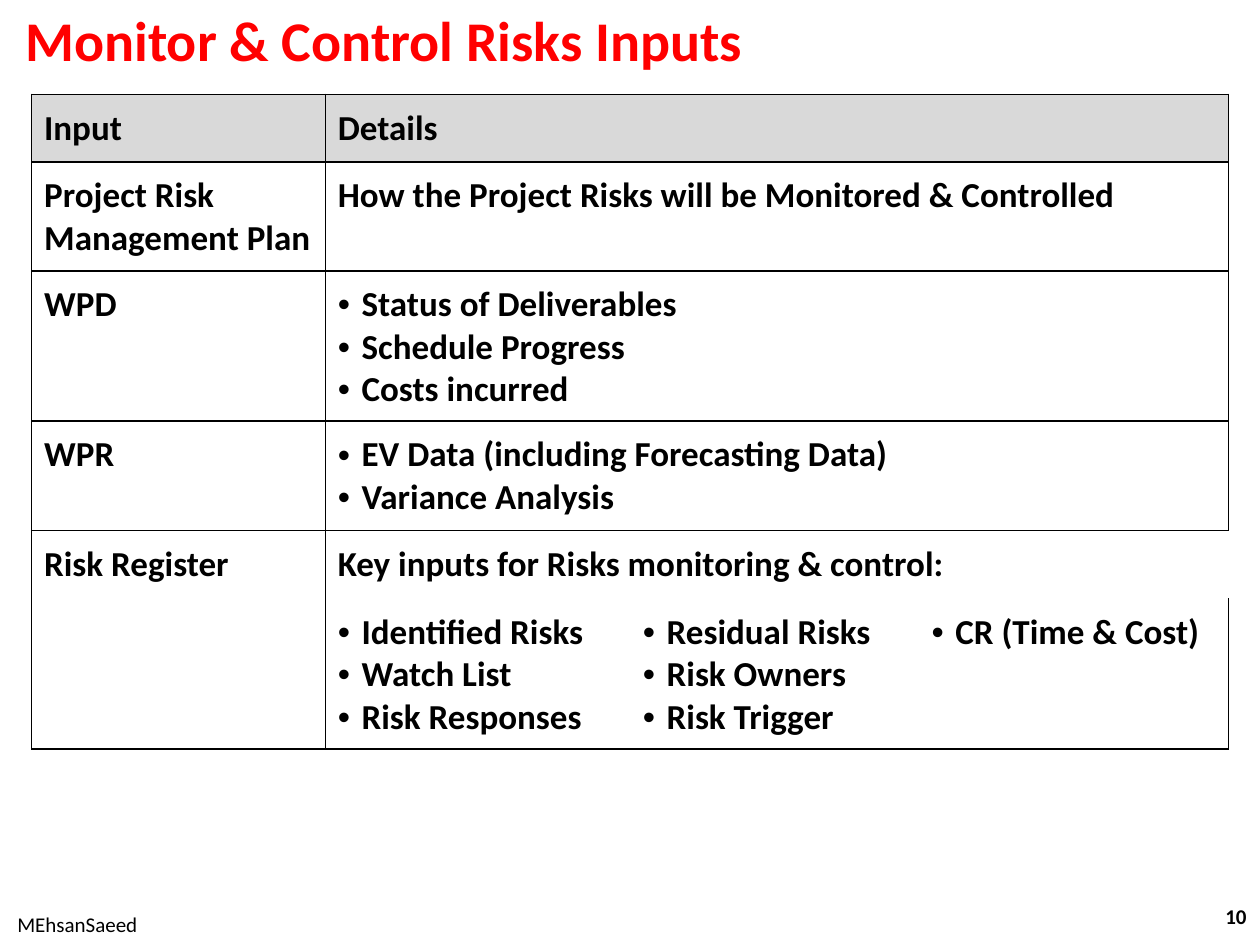
from lxml import etree
from pptx import Presentation
from pptx import util as u
from pptx.dml.color import RGBColor
from pptx.enum import text as t
from pptx.oxml import ns

LABELS = [
    ("Monitor & Control Risks Inputs", (0, 0, 25.4, 1.57), 32, "FF0000", True, "LEFT", (0.51, 0)),
    ("10", (19.46, 17.96, 5.92, 1.02), 12, "000000", True, "RIGHT", (0.25, 0.25)),
    ("MEhsanSaeed", (-0.03, 18.11, 3.18, 1.02), 12, "000000", False, "CENTER", (0.25, 0.25)),
]

PAIR = (5.92, 18.21)
TABLES = [
    (PAIR, [
        (1.37, ["Input", "Details"]),
        (2.18, ["Project Risk Management Plan",
                "How the Project Risks will be Monitored & Controlled"]),
    ]),
    (PAIR, [(3.04, ["WPD", ["Status of Deliverables", "Schedule Progress", "Costs incurred"]])]),
    (PAIR, [(2.2, ["WPR", ["EV Data (including Forecasting Data)", "Variance Analysis"]])]),
    ((5.92, 6.15, 5.82, 6.24), [
        (1.37, ["Risk Register", "Key inputs for Risks monitoring & control:", "", ""]),
        (3.04, ["",
                ["Identified Risks", "Watch List", "Risk Responses"],
                ["Residual Risks", "Risk Owners", "Risk Trigger"],
                ["CR (Time & Cost)"]]),
    ]),
]
LEFT, TOP, PAD, INDENT = 0.64, 1.9, 0.25, 0.48


def color(code):
    return RGBColor.from_string(code)


def style(para, size, code, bold):
    for run in para.runs:
        font = run.font
        font.name, font.size, font.bold = "Calibri", u.Pt(size), bold
        font.color.rgb = color(code)


def label(slide, words, place, size, code, bold, align, pads):
    frame = slide.shapes.add_textbox(*map(u.Cm, place)).text_frame
    frame.word_wrap = True
    frame.vertical_anchor = t.MSO_ANCHOR.MIDDLE
    frame.margin_left, frame.margin_right = map(u.Cm, pads)
    frame.margin_top = frame.margin_bottom = 0
    para = frame.paragraphs[0]
    para.text = words
    para.alignment = t.PP_ALIGN[align]
    style(para, size, code, bold)


def bullet(para):
    props = para._p.get_or_add_pPr()
    props.set("marL", str(u.Cm(INDENT)))
    props.set("indent", str(-u.Cm(INDENT)))
    etree.SubElement(props, ns.qn("a:buFont"), typeface="Arial")
    etree.SubElement(props, ns.qn("a:buChar"), char="•")


def border(cell, sides):
    props = cell._tc.get_or_add_tcPr()
    for side in "LRTB":
        line = etree.SubElement(props, ns.qn("a:ln" + side), w=str(u.Pt(1)))
        if side in sides:
            fill = etree.SubElement(line, ns.qn("a:solidFill"))
            etree.SubElement(fill, ns.qn("a:srgbClr"), val="000000")
        else:
            etree.SubElement(line, ns.qn("a:noFill"))


def edges(row, col, rows, cols):
    if col == 0 or cols == 2:
        return "LRTB"
    tests = {"L": col == 1, "R": col == cols - 1, "T": row == 0, "B": row == rows - 1}
    return [side for side, outer in tests.items() if outer]


def write(cell, item):
    cell.margin_left = cell.margin_right = u.Cm(PAD)
    cell.margin_top = cell.margin_bottom = u.Cm(PAD)
    cell.text_frame.text = item if isinstance(item, str) else "\n".join(item)
    for para in cell.text_frame.paragraphs:
        style(para, 20, "000000", True)
        if isinstance(item, list):
            bullet(para)


def grid(slide, top, widths, rows):
    high = sum(row[0] for row in rows)
    place = map(u.Cm, (LEFT, top, sum(widths), high))
    table = slide.shapes.add_table(len(rows), len(widths), *place).table
    table.first_row = table.horz_banding = False
    for col, width in enumerate(widths):
        table.columns[col].width = u.Cm(width)
    for r, (tall, items) in enumerate(rows):
        table.rows[r].height = u.Cm(tall)
        for c, item in enumerate(items):
            cell = table.cell(r, c)
            border(cell, edges(r, c, len(rows), len(widths)))
            write(cell, item)
            if items[0] == "Input":
                cell.fill.solid()
                cell.fill.fore_color.rgb = color("D9D9D9")
                cell.vertical_anchor = t.MSO_ANCHOR.BOTTOM
            else:
                cell.fill.background()
    if len(widths) > 2:
        table.cell(0, 0).merge(table.cell(1, 0))
        table.cell(0, 1).merge(table.cell(0, 3))
    return top + high


def main():
    deck = Presentation()
    deck.slide_width, deck.slide_height = u.Cm(25.4), u.Cm(19.05)
    slide = deck.slides.add_slide(deck.slide_layouts[6])
    for item in LABELS:
        label(slide, *item)
    top = TOP
    for widths, rows in TABLES:
        top = grid(slide, top, widths, rows)
    deck.save("out.pptx")


if __name__ == "__main__":
    main()
